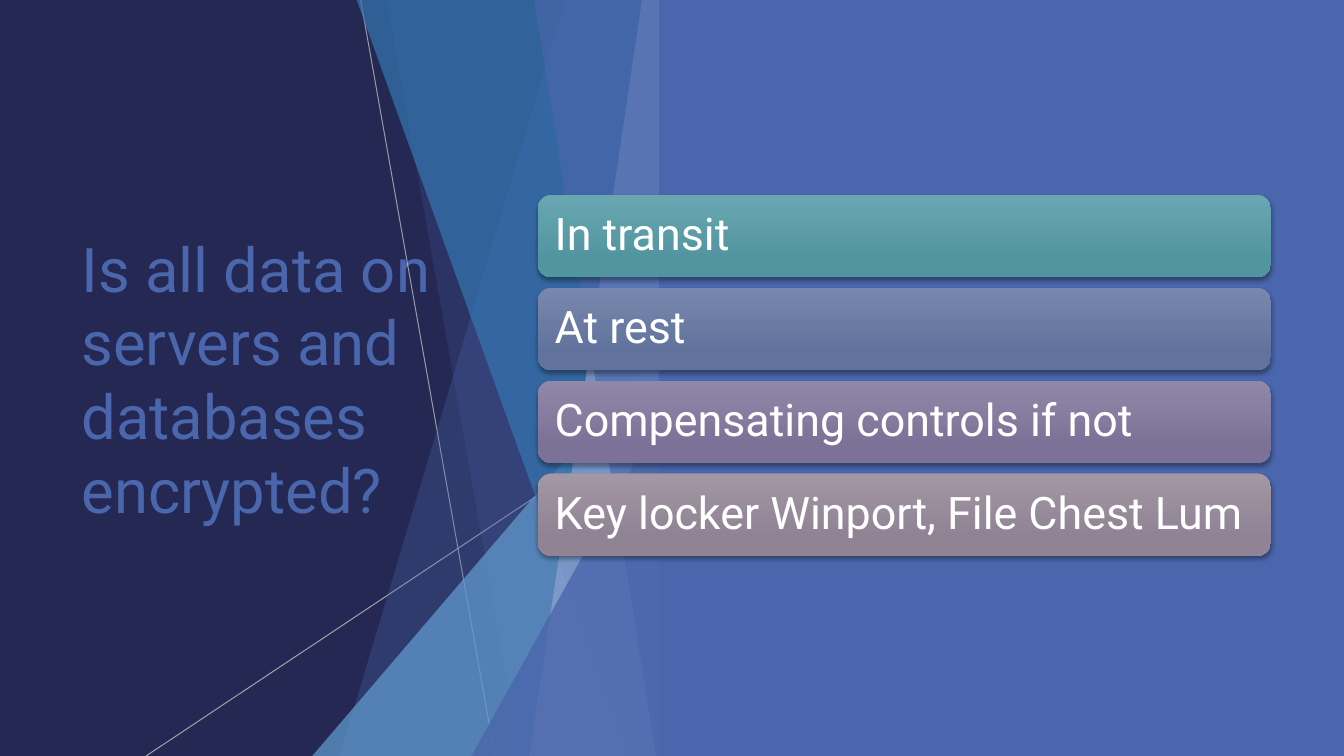
from lxml import etree
from pptx import Presentation
from pptx.dml.color import RGBColor
from pptx.enum.shapes import MSO_CONNECTOR, MSO_SHAPE
from pptx.enum.text import MSO_ANCHOR, MSO_AUTO_SIZE, PP_ALIGN
from pptx.oxml import parse_xml
from pptx.oxml.ns import nsdecls, qn
from pptx.util import Cm, Pt

WIDTH, HEIGHT = 33.87, 19.05
NAVY, BLUE, FONT = "242852", "4A66AC", "Roboto"


def color(value):
    return RGBColor.from_string(value)


def set_opacity(shape, percent):
    for element in shape._element.spPr.iter(qn("a:srgbClr")):
        etree.SubElement(element, qn("a:alpha"), val=str(percent * 1000))


presentation = Presentation()
presentation.slide_width, presentation.slide_height = Cm(WIDTH), Cm(HEIGHT)
slide = presentation.slides.add_slide(presentation.slide_layouts[5])
slide.background.fill.solid()
slide.background.fill.fore_color.rgb = color(NAVY)

# Title
title = slide.shapes.title
title.left, title.top, title.width, title.height = Cm(1.8), Cm(3.84), Cm(9.86), Cm(11.38)
frame = title.text_frame
frame.word_wrap = True
frame.auto_size = MSO_AUTO_SIZE.NONE
frame.vertical_anchor = MSO_ANCHOR.MIDDLE
paragraph = frame.paragraphs[0]
paragraph.alignment = PP_ALIGN.LEFT
run = paragraph.add_run()
run.text = "Is all data on servers and databases encrypted?"
run.font.name, run.font.size = FONT, Pt(44)
run.font.color.rgb = color(BLUE)

# Thin crossing lines
for x1, y1, x2, y2, opacity in [(9.09, 0, 12.47, HEIGHT, 75), (16.92, 10.24, 3.68, HEIGHT, 80)]:
    line = slide.shapes.add_connector(MSO_CONNECTOR.STRAIGHT, Cm(x1), Cm(y1), Cm(x2), Cm(y2))
    line.line.color.rgb = color("BFBFBF")
    line.line.width = Pt(0.75)
    set_opacity(line, opacity)
    etree.SubElement(line._element.spPr, qn("a:effectLst"))

# Translucent shards sharing one right edge: (kind, a, b, fill, opacity)
# shard: a = top-left x, b = bottom-left x; triangle: a = left, b = top
SHARD_RIGHT = 16.93
facets = [
    ("shard", 14.25, 8.56, BLUE, 30),
    ("shard", 9.75, 13.11, BLUE, 20),
    ("triangle", 7.87, 8.46, "629DD1", 72),
    ("shard", 8.99, 15.85, "3477B2", 70),
    ("shard", 16.18, 13.34, "90A2CF", 70),
    ("shard", 13.46, 16.54, BLUE, 65),
    ("triangle", 11.88, 9.98, BLUE, 80),
]
for kind, a, b, fill, opacity in facets:
    if kind == "shard":
        builder = slide.shapes.build_freeform(Cm(a), 0)
        corners = [(SHARD_RIGHT, 0), (SHARD_RIGHT, HEIGHT), (b, HEIGHT)]
        builder.add_line_segments([(Cm(x), Cm(y)) for x, y in corners], close=True)
        shape = builder.convert_to_shape()
    else:
        shape = slide.shapes.add_shape(
            MSO_SHAPE.ISOSCELES_TRIANGLE, Cm(a), Cm(b), Cm(SHARD_RIGHT - a), Cm(HEIGHT - b))
        shape.adjustments[0] = 1.0
    shape.fill.solid()
    shape.fill.fore_color.rgb = color(fill)
    set_opacity(shape, opacity)
    shape.line.fill.background()
    shape.shadow.inherit = False

# Right panel
PANEL_LEFT = 16.61
panel = slide.shapes.add_shape(
    MSO_SHAPE.RECTANGLE, Cm(PANEL_LEFT), 0, Cm(WIDTH - PANEL_LEFT), Cm(HEIGHT))
panel.fill.solid()
panel.fill.fore_color.rgb = color(BLUE)
panel.line.fill.background()
panel.shadow.inherit = False

# Answer cards
cards = [
    ("In transit", "68A7B2", "5295A0"),
    ("At rest", "7887AD", "61739D"),
    ("Compensating controls if not", "9088A8", "7C7298"),
    ("Key locker Winport, File Chest Lum", "A297A5", "908394"),
]
for index, (text, light, dark) in enumerate(cards):
    card = slide.shapes.add_shape(
        MSO_SHAPE.ROUNDED_RECTANGLE, Cm(13.55), Cm(4.91 + 2.34 * index), Cm(18.48), Cm(2.08))
    card.fill.gradient()
    card.fill.gradient_angle = 270
    for stop, position, value in zip(card.fill.gradient_stops, (0, 0.78), (light, dark)):
        stop.position = position
        stop.color.rgb = color(value)
    card.line.fill.background()
    card.shadow.inherit = False
    effects = card._element.spPr.find(qn("a:effectLst"))
    effects.append(parse_xml(
        f'<a:outerShdw {nsdecls("a")} blurRad="{Pt(3)}" dist="{Pt(2)}" dir="5400000" rotWithShape="0">'
        '<a:srgbClr val="000000"><a:alpha val="35000"/></a:srgbClr></a:outerShdw>'))

    frame = card.text_frame
    frame.word_wrap = True
    frame.vertical_anchor = MSO_ANCHOR.MIDDLE
    frame.margin_left, frame.margin_right = Cm(0.33), Cm(0.2)
    frame.margin_top = frame.margin_bottom = Cm(0.3)
    paragraph = frame.paragraphs[0]
    paragraph.alignment = PP_ALIGN.LEFT
    paragraph.line_spacing = 0.9
    run = paragraph.add_run()
    run.text = text
    run.font.name, run.font.size = FONT, Pt(32)
    run.font.color.rgb = color("FFFFFF")

presentation.save("out.pptx")
